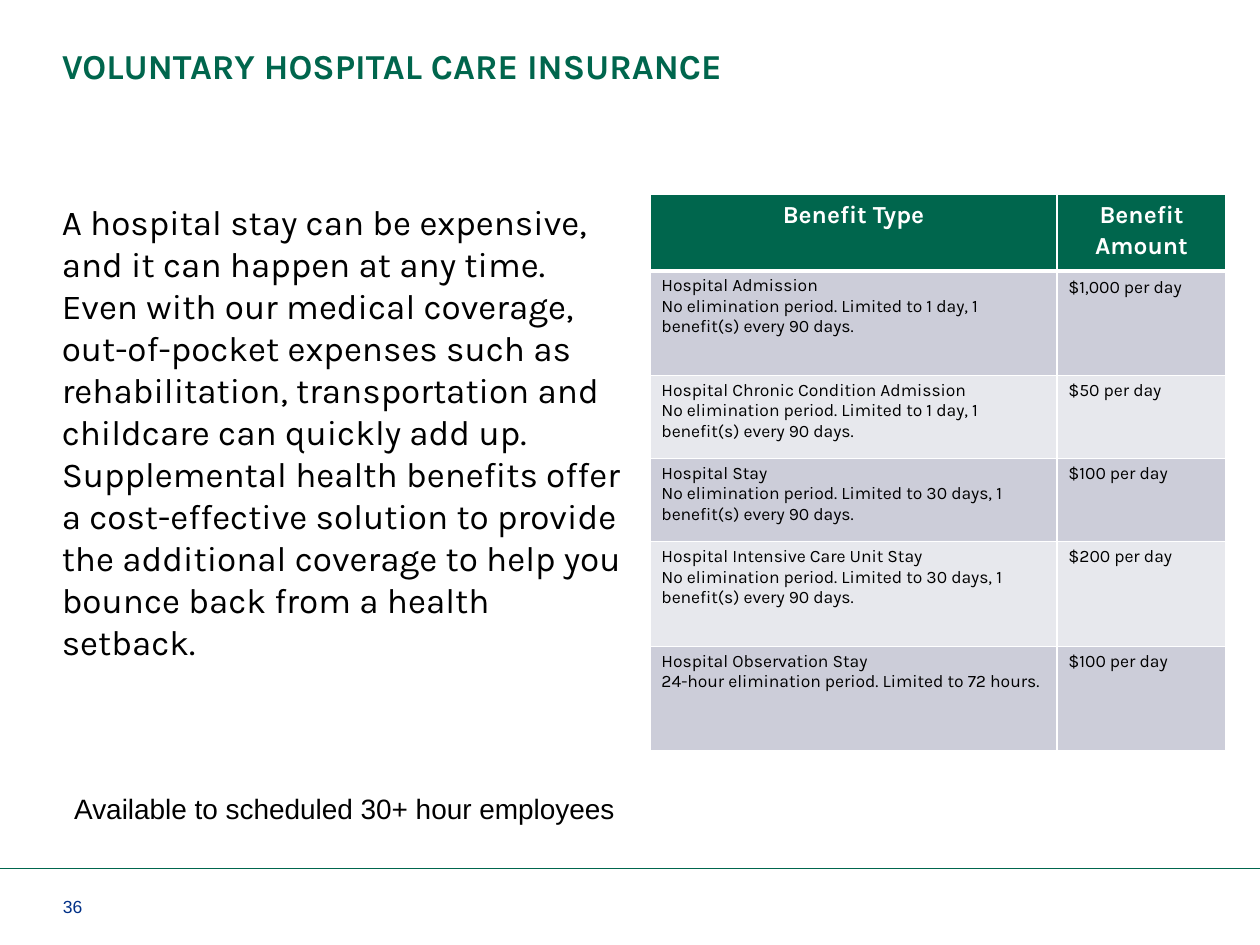
"""Build the voluntary hospital care insurance slide."""
from lxml import etree
from pptx import Presentation
from pptx.dml.color import RGBColor
from pptx.enum.shapes import MSO_CONNECTOR
from pptx.enum.text import MSO_ANCHOR, MSO_AUTO_SIZE, PP_ALIGN
from pptx.oxml.ns import qn
from pptx.util import Inches, Pt

LINE = MSO_CONNECTOR.STRAIGHT
TOP, BOTTOM = MSO_ANCHOR.TOP, MSO_ANCHOR.BOTTOM
LEFT, CENTER = PP_ALIGN.LEFT, PP_ALIGN.CENTER
FIXED = MSO_AUTO_SIZE.NONE

GREEN = RGBColor(0x00, 0x66, 0x4D)
BLUE = RGBColor(0x00, 0x30, 0x87)
BLACK = RGBColor(0x00, 0x00, 0x00)
WHITE = RGBColor(0xFF, 0xFF, 0xFF)
BANDS = [RGBColor(0xCC, 0xCD, 0xD9), RGBColor(0xE7, 0xE8, 0xED)]

TITLE = "VOLUNTARY HOSPITAL CARE INSURANCE"
BODY = (
    "A hospital stay can be expensive, and it can happen at any time. "
    "Even with our medical coverage, out-of-pocket expenses such as "
    "rehabilitation, transportation and childcare can quickly add "
    "up. Supplemental health benefits offer a cost-effective solution to "
    "provide the additional coverage to help you bounce back from a "
    "health setback."
)
NOTE = "Available to scheduled 30+ hour employees"
NUMBER = "36"
LIMIT = "No elimination period. Limited to {}, 1 benefit(s) every 90 days."
HEAD = ("Benefit Type", "Benefit Amount")
ROWS = [
    ("Hospital Admission", LIMIT.format("1 day"), "$1,000 per day"),
    ("Hospital Chronic Condition Admission", LIMIT.format("1 day"), "$50 per day"),
    ("Hospital Stay", LIMIT.format("30 days"), "$100 per day"),
    ("Hospital Intensive Care Unit Stay", LIMIT.format("30 days"), "$200 per day"),
    ("Hospital Observation Stay",
     "24-hour elimination period. Limited to 72 hours.", "$100 per day"),
]
WIDTHS = [3.23, 1.34]
HEIGHTS = [0.61, 0.83, 0.66, 0.66, 0.83, 0.83]


def write(frame, text, size, color, font="Karla", bold=False, align=LEFT, space=None):
    frame.text = text
    frame.word_wrap = True
    for para in frame.paragraphs:
        para.alignment = align
        para.line_spacing = space
        for run in para.runs:
            run.font.name = font
            run.font.size = Pt(size)
            run.font.bold = bold
            run.font.color.rgb = color


def inset(frame, left, right):
    frame.margin_left, frame.margin_right = Inches(left), Inches(right)
    frame.margin_top = frame.margin_bottom = Inches(0.05)


def add_text(slide, box, text, size, color, font, sides=(0.1, 0.1), anchor=TOP):
    frame = slide.shapes.add_textbox(*map(Inches, box)).text_frame
    inset(frame, *sides)
    frame.vertical_anchor = anchor
    write(frame, text, size, color, font)


def edge(cell, base):
    props = cell._tc.get_or_add_tcPr()
    widths = {"a:lnL": 1, "a:lnR": 1, "a:lnT": 1, "a:lnB": base}
    for spot, (tag, width) in enumerate(widths.items()):
        line = etree.Element(qn(tag), w=str(Pt(width)))
        fill = etree.SubElement(line, qn("a:solidFill"))
        etree.SubElement(fill, qn("a:srgbClr"), val=str(WHITE))
        props.insert(spot, line)


def add_grid(slide):
    box = (5.16, 1.54, sum(WIDTHS), sum(HEIGHTS))
    table = slide.shapes.add_table(
        len(HEIGHTS), len(WIDTHS), *map(Inches, box)).table
    for col, width in zip(table.columns, WIDTHS):
        col.width = Inches(width)
    for row, height in zip(table.rows, HEIGHTS):
        row.height = Inches(height)
    cells = [HEAD] + [(f"{name}\n{terms}", cost) for name, terms, cost in ROWS]
    for r, texts in enumerate(cells):
        for c, text in enumerate(texts):
            cell = table.cell(r, c)
            cell.margin_left = cell.margin_right = Inches(0.09)
            cell.margin_top = cell.margin_bottom = Inches(0.04)
            cell.fill.solid()
            if r == 0:
                cell.fill.fore_color.rgb = GREEN
                write(cell.text_frame, text, 14, WHITE, bold=True,
                      align=CENTER, space=1.07)
            else:
                cell.fill.fore_color.rgb = BANDS[(r - 1) % 2]
                space = 1.07 if (r, c) == (1, 1) else None
                write(cell.text_frame, text, 10, BLACK, space=space)
            edge(cell, 3 if r == 0 else 1)


def main():
    deck = Presentation()
    deck.slide_width, deck.slide_height = Inches(10), Inches(7.5)
    slide = deck.slides.add_slide(deck.slide_layouts[5])

    rule = slide.shapes.add_connector(
        LINE, 0, Inches(6.89), Inches(10), Inches(6.89))
    rule.line.color.rgb = GREEN
    rule.line.width = Pt(0.5)
    etree.SubElement(rule._element.spPr, qn("a:effectLst"))

    title = slide.shapes.title
    title.left, title.top = Inches(0.49), Inches(0.34)
    title.width, title.height = Inches(8.68), Inches(0.39)
    frame = title.text_frame
    inset(frame, 0, 0)
    frame.vertical_anchor = TOP
    frame.auto_size = FIXED
    write(frame, TITLE, 20, GREEN, bold=True, space=0.9)

    add_text(slide, (0.5, 7.08, 0.54, 0.25), NUMBER, 10, BLUE, "Arial",
             (0, 0), BOTTOM)
    add_text(slide, (0.49, 1.54, 4.58, 2.72), BODY, 20, BLACK, "Karla", (0, 0.1))
    add_grid(slide)
    add_text(slide, (0.49, 6.23, 4.98, 0.37), NOTE, 16, BLACK, "Arial")
    deck.save("out.pptx")


if __name__ == "__main__":
    main()
